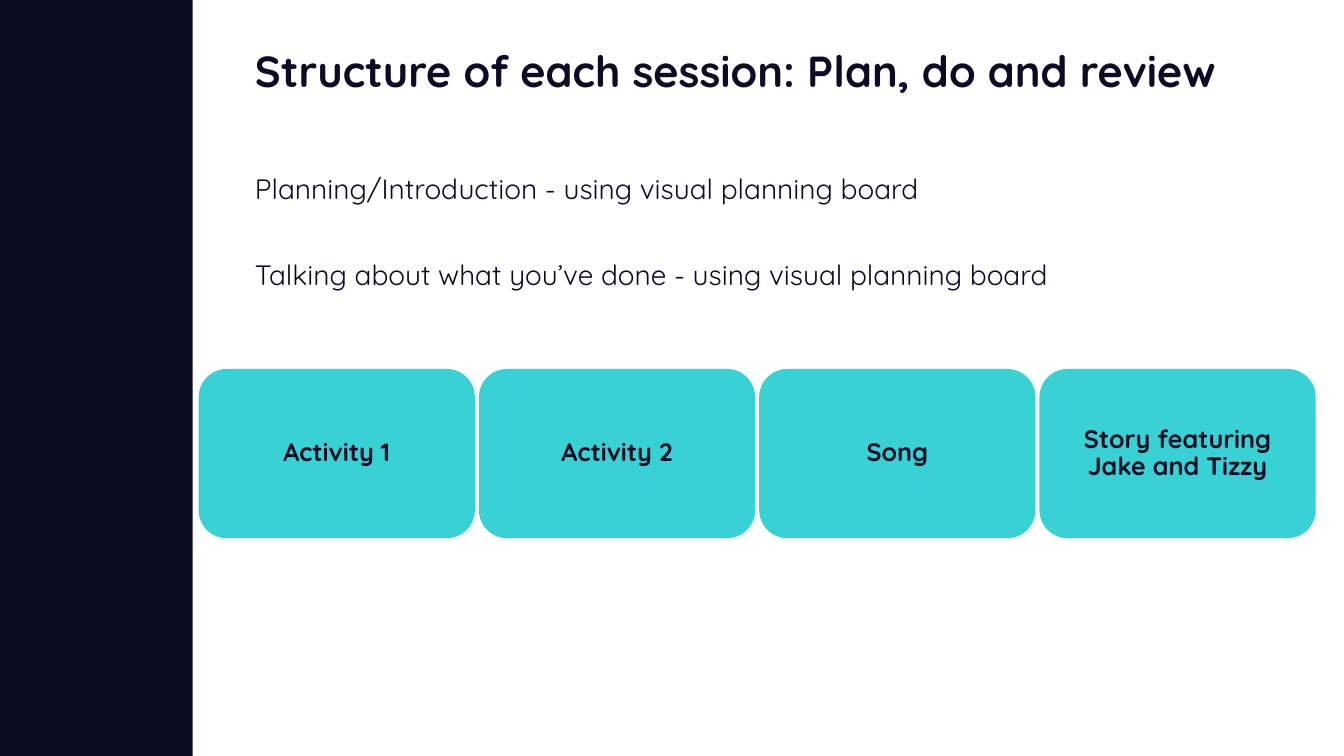
import pptx
import pptx.util
import pptx.dml.color
import pptx.enum.shapes
import pptx.enum.text

Inches = pptx.util.Inches
Pt = pptx.util.Pt
Shape = pptx.enum.shapes.MSO_SHAPE
Align = pptx.enum.text.PP_ALIGN
Anchor = pptx.enum.text.MSO_ANCHOR


def color(hex):
    return pptx.dml.color.RGBColor.from_string(hex)


def write(frame, text, size=20, bold=False, ink="0D0B23", font="Quicksand",
          align=Align.LEFT, line=0.9, gap=0):
    frame.word_wrap = True
    for i, words in enumerate(text.split("\n")):
        para = frame.paragraphs[0] if i == 0 else frame.add_paragraph()
        para.alignment = align
        para.line_spacing = line
        para.space_before = Pt(gap if i else 0)
        run = para.add_run()
        run.text = words
        run.font.name = font
        run.font.size = Pt(size)
        run.font.bold = bold
        run.font.color.rgb = color(ink)


class Deck:
    dark = "0D0B23"
    teal = "38D2D5"

    def __init__(self):
        self.file = pptx.Presentation()
        self.file.slide_width = Inches(13.33)
        self.file.slide_height = Inches(7.5)
        self.slide = self.file.slides.add_slide(self.file.slide_layouts[6])

    def block(self, kind, x, y, w, h, fill):
        shape = self.slide.shapes.add_shape(
            kind, Inches(x), Inches(y), Inches(w), Inches(h))
        shape.shadow.inherit = False
        shape.fill.solid()
        shape.fill.fore_color.rgb = color(fill)
        shape.line.fill.background()
        return shape

    def panel(self, x, y, w, h):
        self.block(Shape.RECTANGLE, x, y, w, h, self.dark)

    def card(self, text, x, y, w, h):
        shape = self.block(Shape.ROUNDED_RECTANGLE, x, y, w, h, self.teal)
        frame = shape.text_frame
        frame.vertical_anchor = Anchor.MIDDLE
        frame.margin_left = frame.margin_right = Inches(0.15)
        write(frame, text, size=18, bold=True, align=Align.CENTER)

    def text(self, text, x, y, w, h, **style):
        box = self.slide.shapes.add_textbox(
            Inches(x), Inches(y), Inches(w), Inches(h))
        write(box.text_frame, text, **style)


def main():
    deck = Deck()
    deck.panel(0, 0, 1.91, 7.5)
    deck.text("Structure of each session: Plan, do and review",
              2.43, 0.53, 10.38, 0.81, size=31, bold=True, line=0.7)
    deck.text("Planning/Introduction - using visual planning board\n"
              "Talking about what you’ve done - using visual planning board",
              2.43, 1.69, 10.38, 1.68, gap=40)
    steps = ["Activity 1", "Activity 2", "Song", "Story featuring Jake and Tizzy"]
    for i, step in enumerate(steps):
        deck.card(step, 1.97 + 2.78 * i, 3.66, 2.74, 1.68)
    deck.file.save("out.pptx")


if __name__ == "__main__":
    main()
